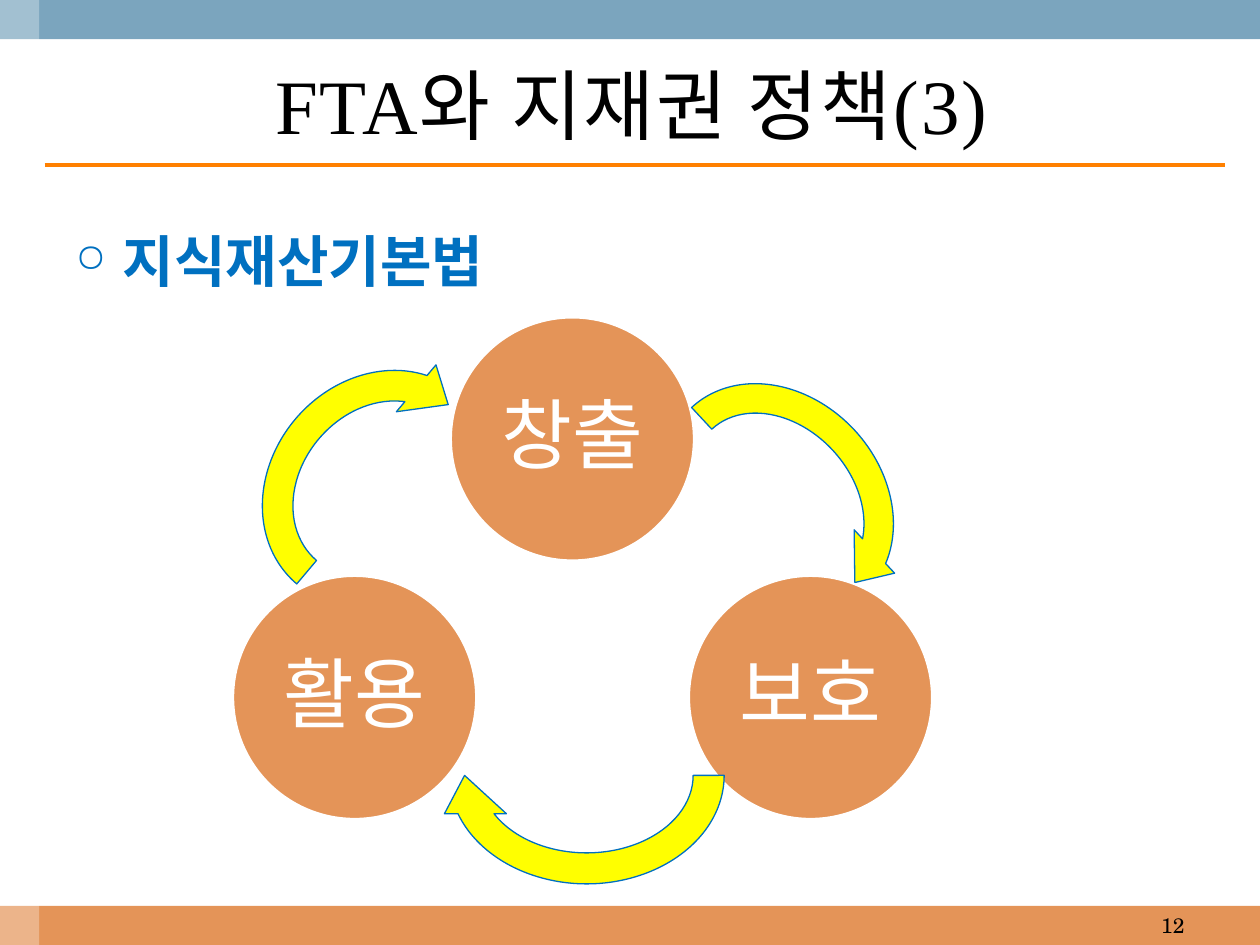
from dataclasses import dataclass

from lxml.etree import SubElement
from pptx import Presentation
from pptx.dml.color import RGBColor
from pptx.enum.shapes import MSO_CONNECTOR, MSO_SHAPE as Shape
from pptx.enum.text import MSO_ANCHOR as Anchor, PP_ALIGN as Align
from pptx.oxml.ns import qn
from pptx.util import Cm, Pt

COLORS = {
    "orange": "E49458", "steel": "7BA5BE", "white": "FFFFFF", "black": "000000",
    "rule": "FF8000", "blue": "0070C0", "yellow": "FFFF00",
}
SERIF, SCHOLA = "Times New Roman", "TeX Gyre Schola"
WIDTH, HEIGHT, BAND = 25.4, 19.05, 0.79
DIAMETER = 4.9


@dataclass
class Box:
    left: float
    top: float
    width: float
    height: float

    def lengths(self) -> tuple:
        return Cm(self.left), Cm(self.top), Cm(self.width), Cm(self.height)


@dataclass
class Stage:
    """A circle of the cycle and the arrow that leaves it."""
    label: str
    left: float
    top: float
    arrow: Box
    rotation: float


STAGES = [
    Stage("창출", 9.09, 6.4, Box(12.83, 7.7, 5.72, 4.78), 47),
    Stage("보호", 13.89, 11.61, Box(8.74, 13.13, 6.17, 5), 180),
    Stage("활용", 4.7, 11.61, Box(4.78, 7.37, 5.66, 4.95), 310.2),
]


def rgb(name: str) -> RGBColor:
    return RGBColor.from_string(COLORS[name])


def add_filled(s, kind, box: Box, fill: str, line: str = "", weight: float = 0):
    sp = s.shapes.add_shape(kind, *box.lengths())
    sp.shadow.inherit = False
    sp.fill.solid()
    sp.fill.fore_color.rgb = rgb(fill)
    if line:
        sp.line.color.rgb = rgb(line)
        sp.line.width = Pt(weight)
    else:
        sp.line.fill.background()
    return sp


def write(tf, text: str, size: float, font: str, color: str, align, anchor, bold=False):
    tf.vertical_anchor = anchor
    p = tf.paragraphs[0]
    p.alignment = align
    r = p.add_run()
    r.text = text
    r.font.size, r.font.name, r.font.bold = Pt(size), font, bold
    r.font.color.rgb = rgb(color)
    return p


def add_text(s, box: Box, *style, **options):
    tf = s.shapes.add_textbox(*box.lengths()).text_frame
    tf.word_wrap = True
    return write(tf, *style, **options)


def add_bullet(p, char: str, percent: int, indent: float) -> None:
    pPr = p._p.get_or_add_pPr()
    pPr.set("marL", str(Cm(indent)))
    pPr.set("indent", str(-Cm(indent)))
    SubElement(pPr, qn("a:buSzPct"), val=str(percent * 1000))
    SubElement(pPr, qn("a:buChar"), char=char)


def add_frame(s) -> None:
    """Draw the bands, the pale left strip and the rule under the title."""
    add_filled(s, Shape.RECTANGLE, Box(0, HEIGHT - BAND, WIDTH, BAND), "orange")
    add_filled(s, Shape.RECTANGLE, Box(0, 0, WIDTH, BAND), "steel")
    strip = add_filled(s, Shape.RECTANGLE, Box(0, 0, BAND, HEIGHT), "white")
    fill = strip._element.spPr.find(qn("a:solidFill"))
    SubElement(fill[0], qn("a:alpha"), val="30000")

    rule = s.shapes.add_connector(
        MSO_CONNECTOR.STRAIGHT, Cm(0.9), Cm(3.33), Cm(24.69), Cm(3.33))
    rule.line.color.rgb = rgb("rule")
    rule.line.width = Pt(2.25)
    SubElement(rule._element.spPr, qn("a:effectLst"))


def add_stage(s, stage: Stage) -> None:
    circle = add_filled(s, Shape.OVAL, Box(stage.left, stage.top, DIAMETER, DIAMETER),
                        "orange", "white", 1.25)
    tf = circle.text_frame
    tf.word_wrap = False
    tf.margin_left = tf.margin_right = tf.margin_top = tf.margin_bottom = Cm(0.15)
    p = write(tf, stage.label, 44, SCHOLA, "white", Align.CENTER, Anchor.MIDDLE)
    p.line_spacing = 0.9
    arrow = add_filled(s, Shape.CIRCULAR_ARROW, stage.arrow, "yellow", "blue", 0.75)
    arrow.rotation = stage.rotation


def main() -> None:
    prs = Presentation()
    prs.slide_width, prs.slide_height = Cm(WIDTH), Cm(HEIGHT)
    s = prs.slides.add_slide(prs.slide_layouts[6])

    add_frame(s)
    p = add_text(s, Box(1.27, 4.45, 22.86, 12.57), "지식재산기본법", 32, SERIF, "blue",
                 Align.LEFT, Anchor.TOP, bold=True)
    p.space_before = Pt(6.4)
    add_bullet(p, "○", 70, 0.95)
    p = add_text(s, Box(0.84, 0.79, 23.77, 2.62), "FTA와 지재권 정책(3)", 44, SERIF,
                 "black", Align.CENTER, Anchor.MIDDLE)
    p.runs[0].font._element.set("spc", "100")
    add_text(s, Box(18.21, HEIGHT - BAND, 5.92, BAND), "12", 12, SCHOLA, "black",
             Align.RIGHT, Anchor.MIDDLE)

    for stage in STAGES:
        add_stage(s, stage)
    prs.save("out.pptx")


if __name__ == "__main__":
    main()
